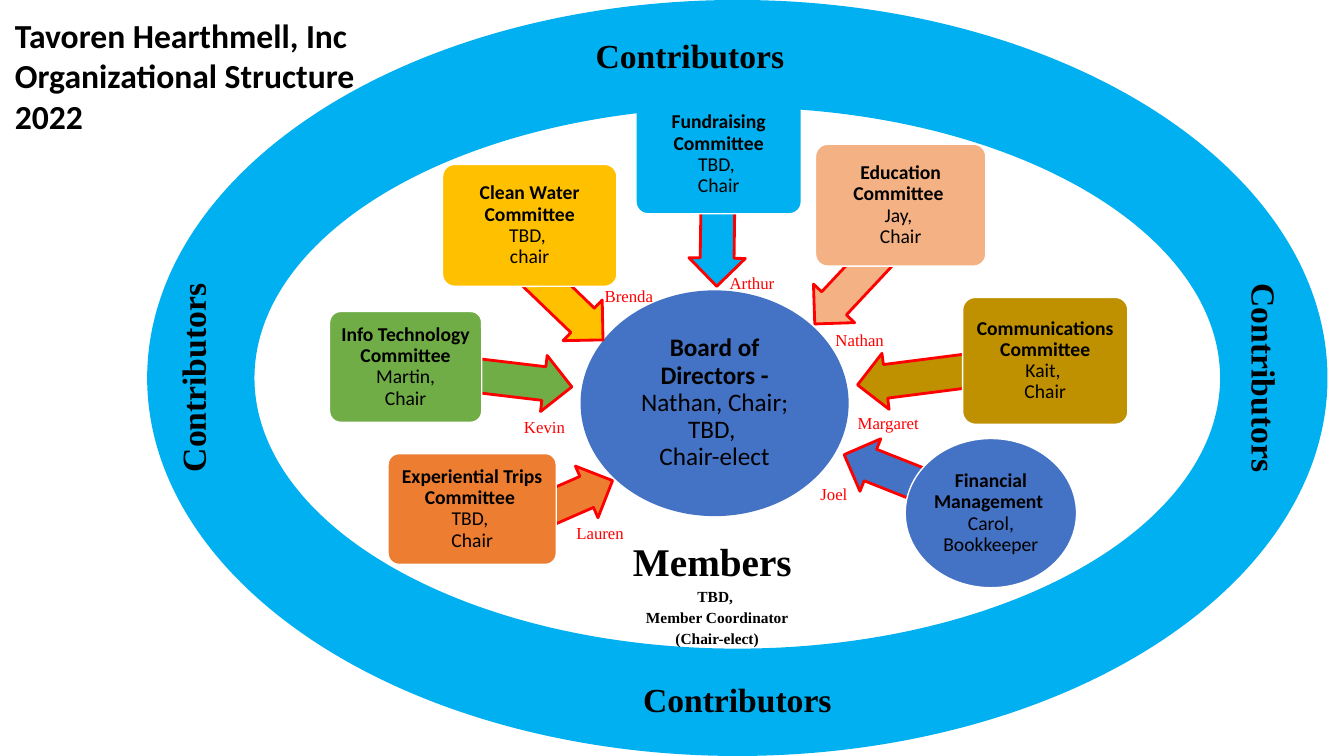
from dataclasses import dataclass
from pptx import Presentation
from pptx.dml.color import RGBColor
from pptx.enum import shapes, text
from pptx.util import Pt


@dataclass(frozen=True)
class Theme:
    sans: str = "Calibri"
    serif: str = "Times New Roman"
    black: str = "000000"
    white: str = "FFFFFF"
    red: str = "FF0000"
    sky: str = "00B0F0"
    blue: str = "4472C4"
    orange: str = "ED7D31"
    green: str = "70AD47"
    gold: str = "FFC000"
    peach: str = "F4B183"
    brown: str = "BF9000"
    huge: int = 28
    head: int = 24
    board: int = 18
    body: int = 14
    name: int = 12
    small: int = 11


theme = Theme()
kind = shapes.MSO_SHAPE
align = text.PP_ALIGN

deck = Presentation()
deck.slide_width, deck.slide_height = Pt(960), Pt(540)
slide = deck.slides.add_slide(deck.slide_layouts[6])


def draw(form, place, fill, line=None, width=1, adjust=(), turn=0):
    shape = slide.shapes.add_shape(form, *map(Pt, place))
    shape.shadow.inherit = False
    shape.rotation = turn
    for i, value in enumerate(adjust):
        shape.adjustments[i] = value
    shape.fill.solid()
    shape.fill.fore_color.rgb = RGBColor.from_string(fill)
    if line:
        shape.line.color.rgb = RGBColor.from_string(line)
        shape.line.width = Pt(width)
    else:
        shape.line.fill.background()
    return shape


def write(words, place=None, shape=None, size=theme.body, lead=None, font=theme.serif,
          color=theme.black, bold=0, side=align.CENTER, space=1.15, after=0,
          inset=None, wrap=True, vert=None):
    """Fill a shape, or a new text box at place; the first `bold` lines are bold
    and the first line may have its own size, `lead`."""
    shape = shape or slide.shapes.add_textbox(*map(Pt, place))
    frame = shape.text_frame
    frame.word_wrap = wrap
    if inset is not None:
        frame.margin_left = frame.margin_right = Pt(inset)
        frame.margin_top = frame.margin_bottom = Pt(inset)
        frame.vertical_anchor = text.MSO_ANCHOR.MIDDLE
    if vert:
        frame._txBody.bodyPr.set("vert", vert)
    for i, line in enumerate(words.split("\n")):
        para = frame.paragraphs[0] if i == 0 else frame.add_paragraph()
        para.alignment, para.line_spacing, para.space_after = side, space, Pt(after)
        run = para.add_run()
        run.text = line
        run.font.name = font
        run.font.size = Pt(lead if lead and i == 0 else size)
        run.font.bold = i < bold
        run.font.color.rgb = RGBColor.from_string(color)


board = draw(kind.OVAL, (414.7, 207.4, 191.5, 161.3), theme.blue)
write("Board of Directors -\nNathan, Chair;\nTBD, \nChair-elect", shape=board,
      size=theme.board, font=theme.sans, bold=1, space=0.9, inset=0.9)

# fill, arrow (left, top, length, turn), box form, box place, words
teams = [
    (theme.orange, (350.6, 341.3, 90.7, 156.4), kind.ROUNDED_RECTANGLE,
     (277.2, 324, 120.2, 79.2), "Experiential Trips Committee \nTBD, \nChair"),
    (theme.green, (289.4, 249.1, 119.5, 186.8), kind.ROUNDED_RECTANGLE,
     (235.4, 222.5, 108.7, 79.2), "Info Technology Committee\nMartin,\nChair"),
    (theme.gold, (360.7, 194.4, 81.4, 223.9), kind.ROUNDED_RECTANGLE,
     (316.1, 117.4, 124.6, 87.1), "Clean Water Committee\nTBD, \nchair"),
    (theme.sky, (464.4, 136.1, 96.5, 270.8), kind.ROUNDED_RECTANGLE,
     (454.3, 67.7, 118.1, 85), "Fundraising Committee\nTBD, \nChair"),
    (theme.peach, (565.9, 174.2, 101.5, 313.1), kind.ROUNDED_RECTANGLE,
     (582.5, 103, 121.7, 87.1), "Education Committee \nJay, \nChair"),
    (theme.brown, (612, 246.2, 135.4, 352.7), kind.ROUNDED_RECTANGLE,
     (687.6, 212.4, 118.1, 90.7), "Communications Committee\nKait, \nChair"),
    (theme.blue, (599, 325.4, 113, 21.6), kind.OVAL,
     (646.6, 313.2, 122.4, 106.6), "Financial Management \nCarol,\nBookkeeper"),
]
for fill, (left, top, length, turn), form, place, words in teams:
    draw(kind.LEFT_ARROW, (left, top, length, 40.3), fill, theme.red, 2, (0.6, 0.5), turn)
    corner = (0.1,) if form == kind.ROUNDED_RECTANGLE else ()
    box = draw(form, place, fill, theme.white, adjust=corner)
    write(words, shape=box, font=theme.sans, bold=1, space=0.9, inset=2.3)

draw(kind.DONUT, (105.1, 0, 843.1, 540), theme.sky, adjust=(0.142,))
write("Members \nTBD, \nMember Coordinator\n(Chair-elect)", (434.9, 375.1, 154.8, 70.6),
      size=theme.small, lead=theme.huge, bold=4)

for place, vert in [
    ((415.4, 17.3, 154.8, 38.9), None),
    ((444.2, 477.4, 164.9, 41.8), None),
    ((115.2, 188.6, 48.2, 162.7), "vert270"),
    ((881.3, 188.6, 44.6, 162.7), "vert"),
]:
    write("Contributors", place, size=theme.head, bold=1, after=10, vert=vert)

write("Tavoren Hearthmell, Inc\nOrganizational Structure\n2022", (3.6, 7.2, 260, 94.3),
      size=theme.head, font=theme.sans, bold=3, side=align.LEFT, space=1.0, wrap=False)

for name, left, top in [
    ("Nathan", 589.7, 229.7),
    ("Brenda", 424.8, 198.7),
    ("Kevin", 367.2, 291.6),
    ("Lauren", 404.6, 367.9),
    ("Arthur", 514.1, 189.4),
    ("Margaret", 605.5, 289.4),
    ("Joel", 578.9, 339.8),
]:
    write(name, (left, top, 68.4, 23), size=theme.name, color=theme.red,
          side=align.LEFT, after=10)

deck.save("out.pptx")
